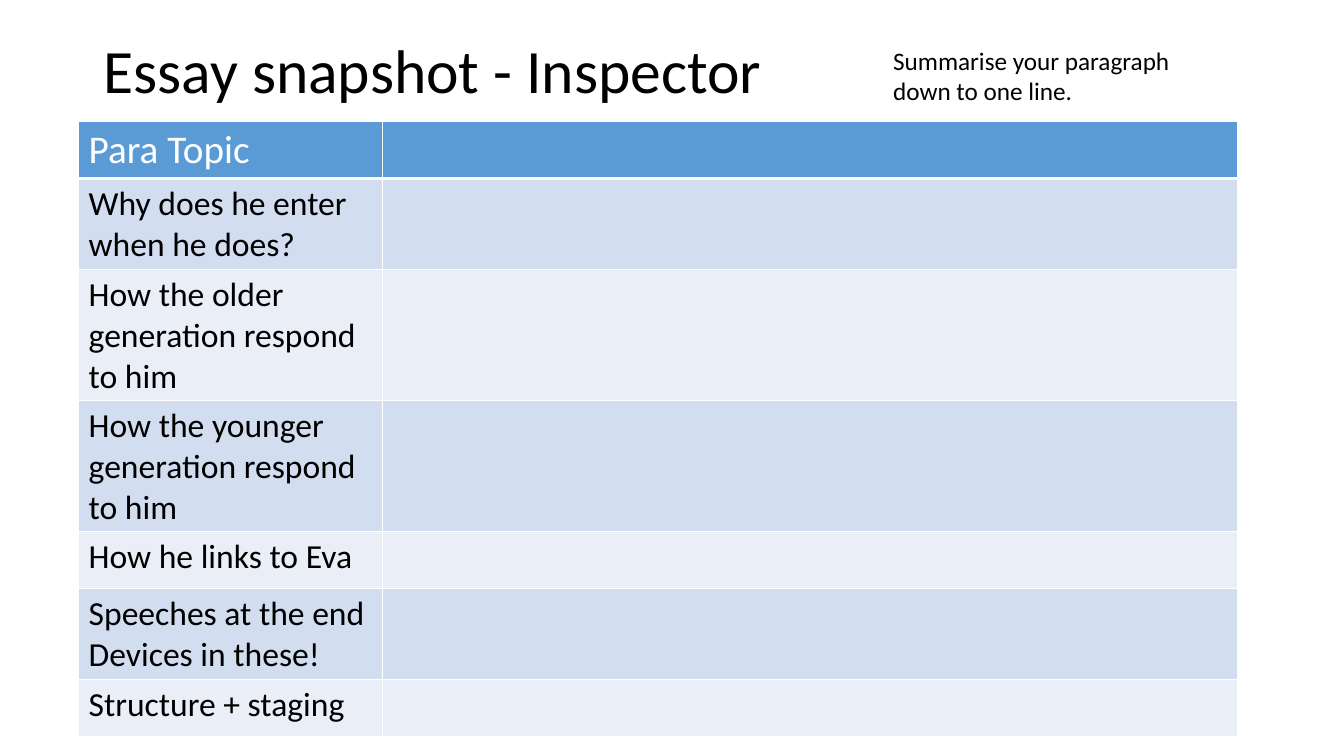
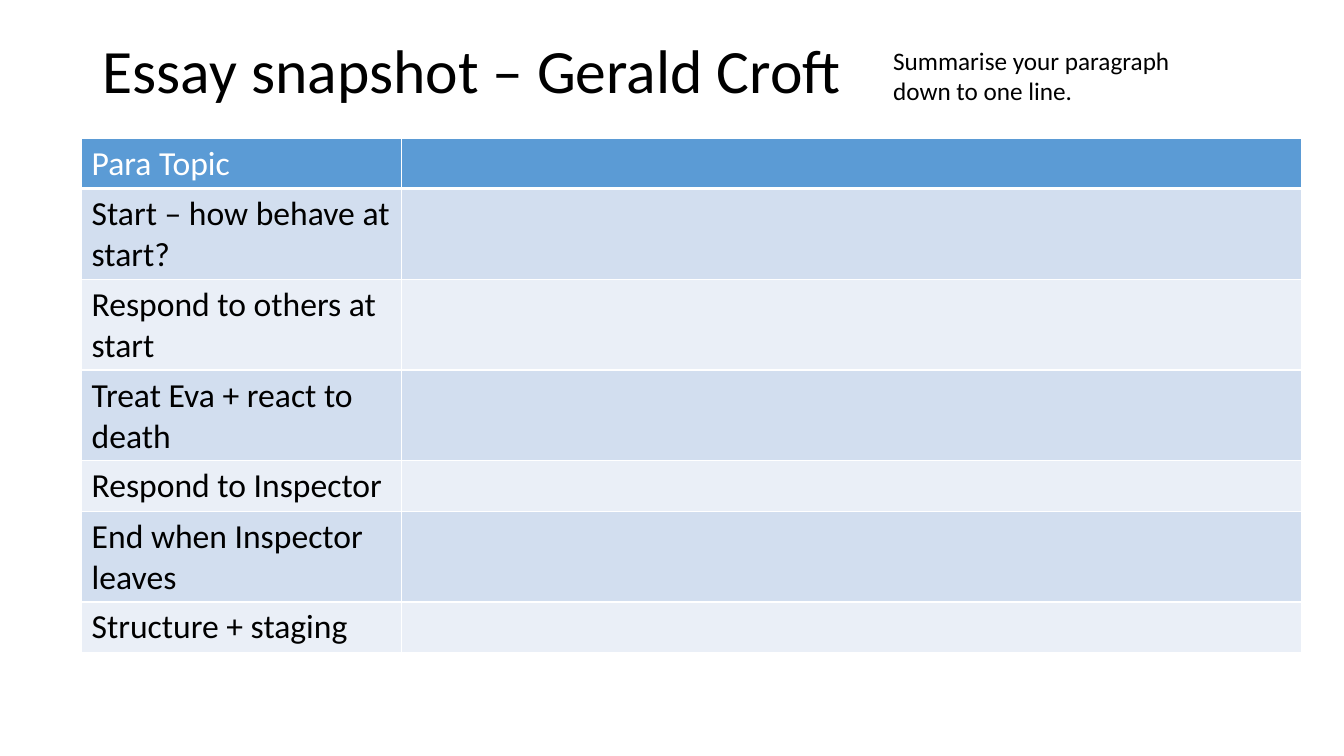
from dataclasses import dataclass

from lxml import etree
from pptx import Presentation
from pptx import util as u
from pptx.dml import color as col
from pptx.enum import text as txt
from pptx.oxml import ns


@dataclass(frozen=True)
class Theme:
    face: str = "Calibri"
    ink: str = "000000"
    white: str = "FFFFFF"
    head: str = "5B9BD5"
    bands: tuple[str, str] = ("D2DEEF", "EAEFF7")
    title: int = 44
    body: int = 24
    note: int = 18
    rule: int = 1
    thick: int = 3


@dataclass(frozen=True)
class Box:
    left: float
    top: float
    width: float
    height: float

    def place(self) -> tuple:
        return tuple(map(u.Inches, (self.left, self.top, self.width, self.height)))


@dataclass(frozen=True)
class Essay:
    title: str
    inset: float
    left: float
    top: float
    cols: tuple[float, float]
    row: float
    size: int
    topics: tuple[str, ...]


LOOK = Theme()
NOTE = Box(8.76, 0.4, 3.32, 0.71)
HINT = "Summarise your paragraph down to one line."
HEAD = "Para Topic"
ESSAYS = (
    Essay("Essay snapshot - Inspector", 0.93, 0.78, 1.2, (3.01, 8.49), 0.57, 28, (
        "Why does he enter when he does?",
        "How the older generation respond to him",
        "How the younger generation respond to him",
        "How he links to Eva",
        "Speeches at the end\nDevices in these!",
        "Structure + staging",
    )),
    Essay("Essay snapshot – Gerald Croft", 0.92, 0.81, 1.37, (3.17, 8.93), 0.5, 24, (
        "Start – how behave at start?",
        "Respond to others at start",
        "Treat Eva + react to death",
        "Respond to Inspector",
        "End when Inspector leaves",
        "Structure + staging",
    )),
)


def style(frame, size: int, ink: str) -> None:
    form = {"name": LOOK.face, "size": u.Pt(size), "bold": False}
    for para in frame.paragraphs:
        for run in para.runs:
            for key, value in form.items():
                setattr(run.font, key, value)
            run.font.color.rgb = col.RGBColor.from_string(ink)


def write(slide, box: Box, words: str, size: int, **form):
    frame = slide.shapes.add_textbox(*box.place()).text_frame
    frame.text = words
    for key, value in {"word_wrap": True, **form}.items():
        setattr(frame, key, value)
    style(frame, size, LOOK.ink)
    return frame


def edge(cell, base: int) -> None:
    props = cell._tc.get_or_add_tcPr()
    for side in "LRTB":
        width = base if side == "B" else LOOK.rule
        line = etree.SubElement(props, ns.qn(f"a:ln{side}"), w=str(u.Pt(width)))
        fill = etree.SubElement(line, ns.qn("a:solidFill"))
        etree.SubElement(fill, ns.qn("a:srgbClr"), val=LOOK.white)


def grid(slide, essay: Essay) -> None:
    rows = (HEAD, *essay.topics)
    box = Box(essay.left, essay.top, sum(essay.cols), essay.row * len(rows))
    table = slide.shapes.add_table(len(rows), len(essay.cols), *box.place()).table
    for part, width in zip(table.columns, essay.cols):
        part.width = u.Inches(width)
    for index, (row, words) in enumerate(zip(table.rows, rows)):
        first = index == 0
        tint = LOOK.head if first else LOOK.bands[(index - 1) % 2]
        for cell in row.cells:
            edge(cell, LOOK.thick if first else LOOK.rule)
            cell.fill.solid()
            cell.fill.fore_color.rgb = col.RGBColor.from_string(tint)
        label = row.cells[0].text_frame
        label.text = words
        size, ink = (essay.size, LOOK.white) if first else (LOOK.body, LOOK.ink)
        style(label, size, ink)


def draw(deck, essay: Essay) -> None:
    slide = deck.slides.add_slide(deck.slide_layouts[6])
    title = write(slide, Box(essay.inset, 0, 11.5, 1.45), essay.title, LOOK.title,
                  vertical_anchor=txt.MSO_ANCHOR.MIDDLE)
    title.paragraphs[0].line_spacing = 0.9
    grid(slide, essay)
    write(slide, NOTE, HINT, LOOK.note, auto_size=txt.MSO_AUTO_SIZE.SHAPE_TO_FIT_TEXT)


def main() -> None:
    deck = Presentation()
    deck.slide_width, deck.slide_height = u.Inches(13.33), u.Inches(7.5)
    for essay in ESSAYS:
        draw(deck, essay)
    deck.save("out.pptx")


if __name__ == "__main__":
    main()
